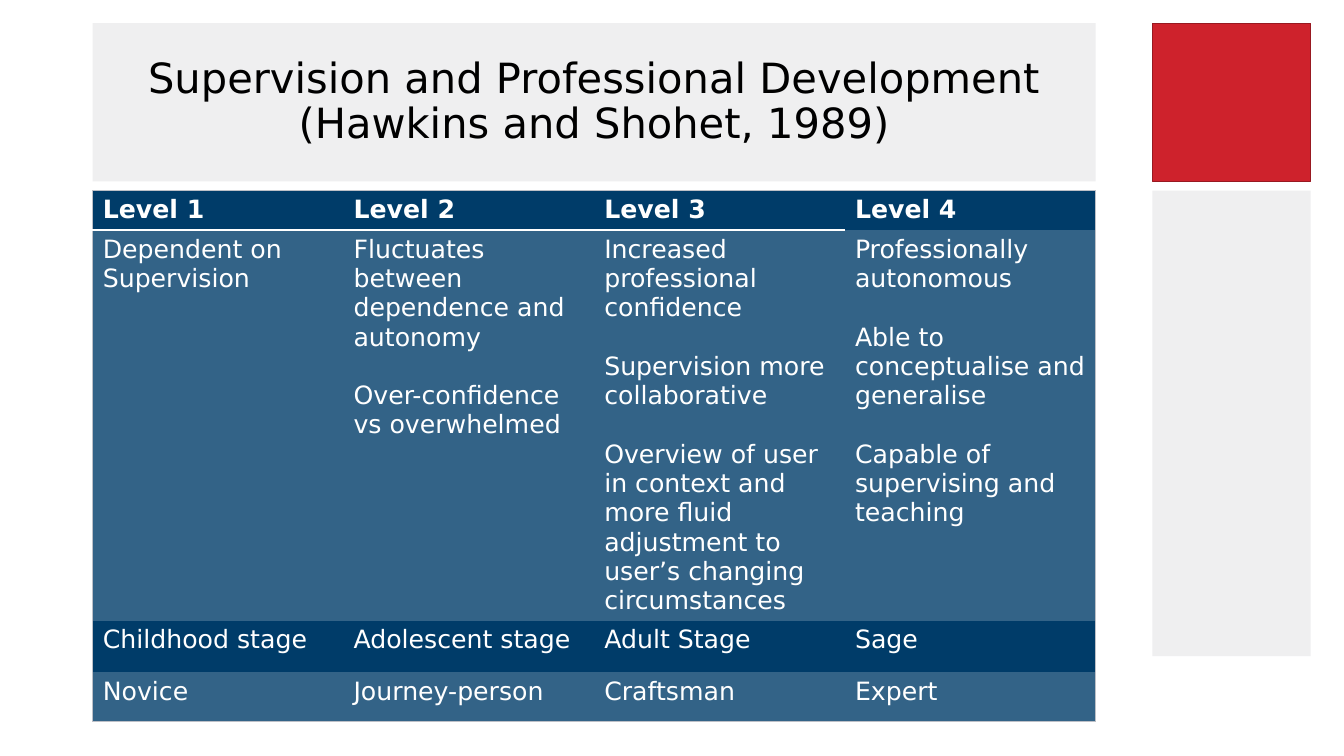
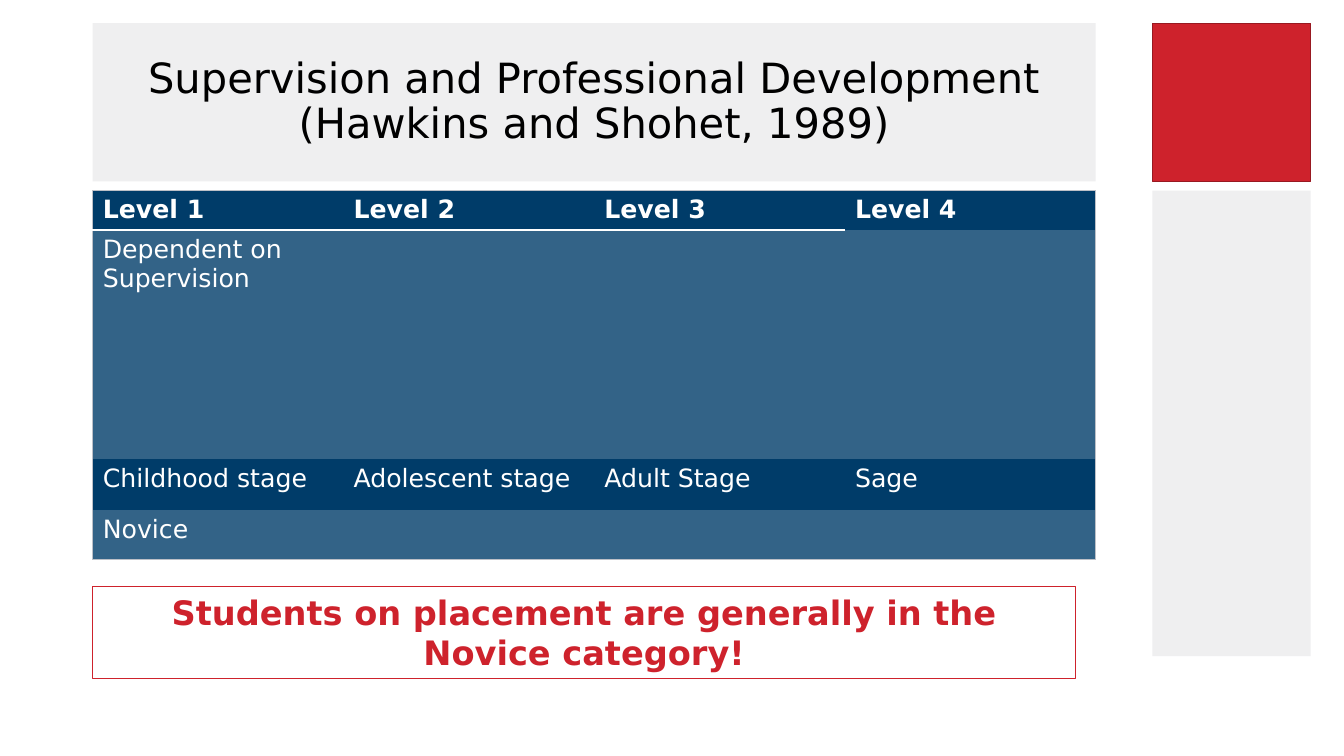
import dataclasses
import typing

import pptx
import pptx.dml.color
import pptx.enum.shapes
import pptx.enum.text
import pptx.oxml.ns
import pptx.util
from lxml import etree

RGBColor = pptx.dml.color.RGBColor
ALIGN = pptx.enum.text.PP_ALIGN
PALE_GREY = RGBColor(0xEF, 0xEF, 0xF0)
RED = RGBColor(0xCE, 0x22, 0x2C)
DARK_RED = RGBColor(0x98, 0x19, 0x21)
NAVY = RGBColor(0x00, 0x3C, 0x69)
STEEL = RGBColor(0x33, 0x63, 0x87)
RULE_GREY = RGBColor(0xBD, 0xC0, 0xC7)
WHITE = RGBColor(0xFF, 0xFF, 0xFF)
BLACK = RGBColor(0x00, 0x00, 0x00)

FONT = "DejaVu Sans"
NO_STYLE = "{2D5ABB26-0587-4C30-8999-92F81FD0307C}"
SLIDE_WIDTH = pptx.util.Inches(13.333)
SLIDE_HEIGHT = pptx.util.Inches(7.5)


def across(percent: float) -> int:
    return round(SLIDE_WIDTH * percent / 100)


def down(percent: float) -> int:
    return round(SLIDE_HEIGHT * percent / 100)


@dataclasses.dataclass(frozen=True)
class Area:
    left: float
    top: float
    width: float
    height: float

    def box(self) -> tuple[int, int, int, int]:
        return across(self.left), down(self.top), across(self.width), down(self.height)


@dataclasses.dataclass(frozen=True)
class Panel:
    area: Area
    fill: RGBColor
    outline: typing.Optional[RGBColor] = None


Cell = tuple[str, ...]


@dataclasses.dataclass(frozen=True)
class Stages:
    descriptions: tuple[Cell, ...]
    roles: tuple[str, ...]
    note: str = ""


ROW_SHARES = (4.8, 30.27, 6.8, 6.53)
TITLE_AREA = Area(6.9, 3.07, 74.63, 20.93)
TABLE_AREA = Area(6.9, 25.2, 74.63, sum(ROW_SHARES))
NOTE_AREA = Area(6.9, 77.6, 73.13, 12.13)
PANELS = (
    Panel(Area(85.75, 25.2, 11.78, 61.6), PALE_GREY),
    Panel(Area(85.75, 3.07, 11.78, 20.93), RED, DARK_RED),
)

TITLE = "Supervision and Professional Development (Hawkins and Shohet, 1989)"
LEVELS = ("Level 1", "Level 2", "Level 3", "Level 4")
LIFE_STAGES = ("Childhood stage", "Adolescent stage", "Adult Stage", "Sage")
DEPENDENT: Cell = ("Dependent on Supervision",)
SLIDES = (
    Stages(
        (
            DEPENDENT,
            ("Fluctuates between dependence and autonomy", "Over-confidence vs overwhelmed"),
            (
                "Increased professional confidence",
                "Supervision more collaborative",
                "Overview of user in context and more fluid adjustment to "
                "user’s changing circumstances",
            ),
            (
                "Professionally autonomous",
                "Able to conceptualise and generalise",
                "Capable of supervising and teaching",
            ),
        ),
        ("Novice", "Journey-person", "Craftsman", "Expert"),
    ),
    Stages(
        (DEPENDENT, (), (), ()),
        ("Novice", "", "", ""),
        "Students on placement are generally in the Novice category!",
    ),
)


def write(frame, *texts: str, size: float, color: RGBColor, bold: bool = False,
          align=ALIGN.LEFT, gap: float = 0, spacing: float = 1.0) -> None:
    for index, text in enumerate(texts):
        paragraph = frame.add_paragraph() if index else frame.paragraphs[0]
        paragraph.alignment = align
        paragraph.line_spacing = spacing
        if index:
            paragraph.space_before = pptx.util.Pt(gap)
        run = paragraph.add_run()
        run.text = text
        run.font.name = FONT
        run.font.size = pptx.util.Pt(size)
        run.font.bold = bold
        run.font.color.rgb = color


def paint(shape, fill: RGBColor) -> None:
    shape.fill.solid()
    shape.fill.fore_color.rgb = fill


def add_panels(slide) -> None:
    layout_tree = slide.slide_layout.shapes.element
    for panel in PANELS:
        block = slide.shapes.add_shape(
            pptx.enum.shapes.MSO_SHAPE.RECTANGLE, *panel.area.box())
        block.shadow.inherit = False
        paint(block, panel.fill)
        if panel.outline is None:
            block.line.fill.background()
        else:
            block.line.color.rgb = panel.outline
            block.line.width = pptx.util.Pt(1)
        layout_tree.append(block.element)


def set_title(slide) -> None:
    heading = slide.shapes.title
    heading.left, heading.top, heading.width, heading.height = TITLE_AREA.box()
    paint(heading, PALE_GREY)
    frame = heading.text_frame
    frame.word_wrap = True
    frame.auto_size = pptx.enum.text.MSO_AUTO_SIZE.NONE
    frame.vertical_anchor = pptx.enum.text.MSO_ANCHOR.MIDDLE
    write(frame, TITLE, size=29.7, color=BLACK, align=ALIGN.CENTER, spacing=0.9)


def add_border(cell, side: str, color: RGBColor, points: float) -> None:
    qn = pptx.oxml.ns.qn
    properties = cell._tc.get_or_add_tcPr()
    border = etree.SubElement(
        properties, qn(f"a:ln{side}"), w=str(pptx.util.Pt(points)))
    solid = etree.SubElement(border, qn("a:solidFill"))
    etree.SubElement(solid, qn("a:srgbClr"), val=str(color))


def add_borders(cell, row: int, column: int, last_row: int, last_column: int) -> None:
    if column == 0:
        add_border(cell, "L", RULE_GREY, 0.5)
    if column == last_column:
        add_border(cell, "R", RULE_GREY, 0.5)
    if row == 0:
        add_border(cell, "T", RULE_GREY, 0.5)
        if column < last_column:
            add_border(cell, "B", WHITE, 1.5)
    if row == last_row:
        add_border(cell, "B", RULE_GREY, 0.5)


def add_levels(slide, stages: Stages) -> None:
    rows = (
        [(level,) for level in LEVELS],
        stages.descriptions,
        [(stage,) for stage in LIFE_STAGES],
        [(role,) if role else () for role in stages.roles],
    )
    levels = slide.shapes.add_table(len(rows), len(LEVELS), *TABLE_AREA.box()).table
    levels.horz_banding = False
    levels._tbl.tblPr.find(pptx.oxml.ns.qn("a:tableStyleId")).text = NO_STYLE
    for column in levels.columns:
        column.width = across(TABLE_AREA.width / len(LEVELS))
    for row, (share, entries) in enumerate(zip(ROW_SHARES, rows)):
        levels.rows[row].height = down(share)
        for column, texts in enumerate(entries):
            cell = levels.cell(row, column)
            add_borders(cell, row, column, len(rows) - 1, len(LEVELS) - 1)
            paint(cell, STEEL if row % 2 else NAVY)
            write(cell.text_frame, *texts, size=18, color=WHITE, bold=row == 0, gap=21)


def add_note(slide, text: str) -> None:
    note = slide.shapes.add_textbox(*NOTE_AREA.box())
    note.line.color.rgb = RED
    note.line.width = pptx.util.Pt(0.75)
    note.text_frame.word_wrap = True
    note.text_frame.auto_size = pptx.enum.text.MSO_AUTO_SIZE.SHAPE_TO_FIT_TEXT
    write(note.text_frame, text, size=24, color=RED, bold=True, align=ALIGN.CENTER)


def main() -> None:
    deck = pptx.Presentation()
    deck.slide_width, deck.slide_height = SLIDE_WIDTH, SLIDE_HEIGHT
    title_only = deck.slide_layouts.get_by_name("Title Only")
    for index, stages in enumerate(SLIDES):
        slide = deck.slides.add_slide(title_only)
        if index == 0:
            add_panels(slide)
        set_title(slide)
        add_levels(slide, stages)
        if stages.note:
            add_note(slide, stages.note)
    deck.save("out.pptx")


if __name__ == "__main__":
    main()
